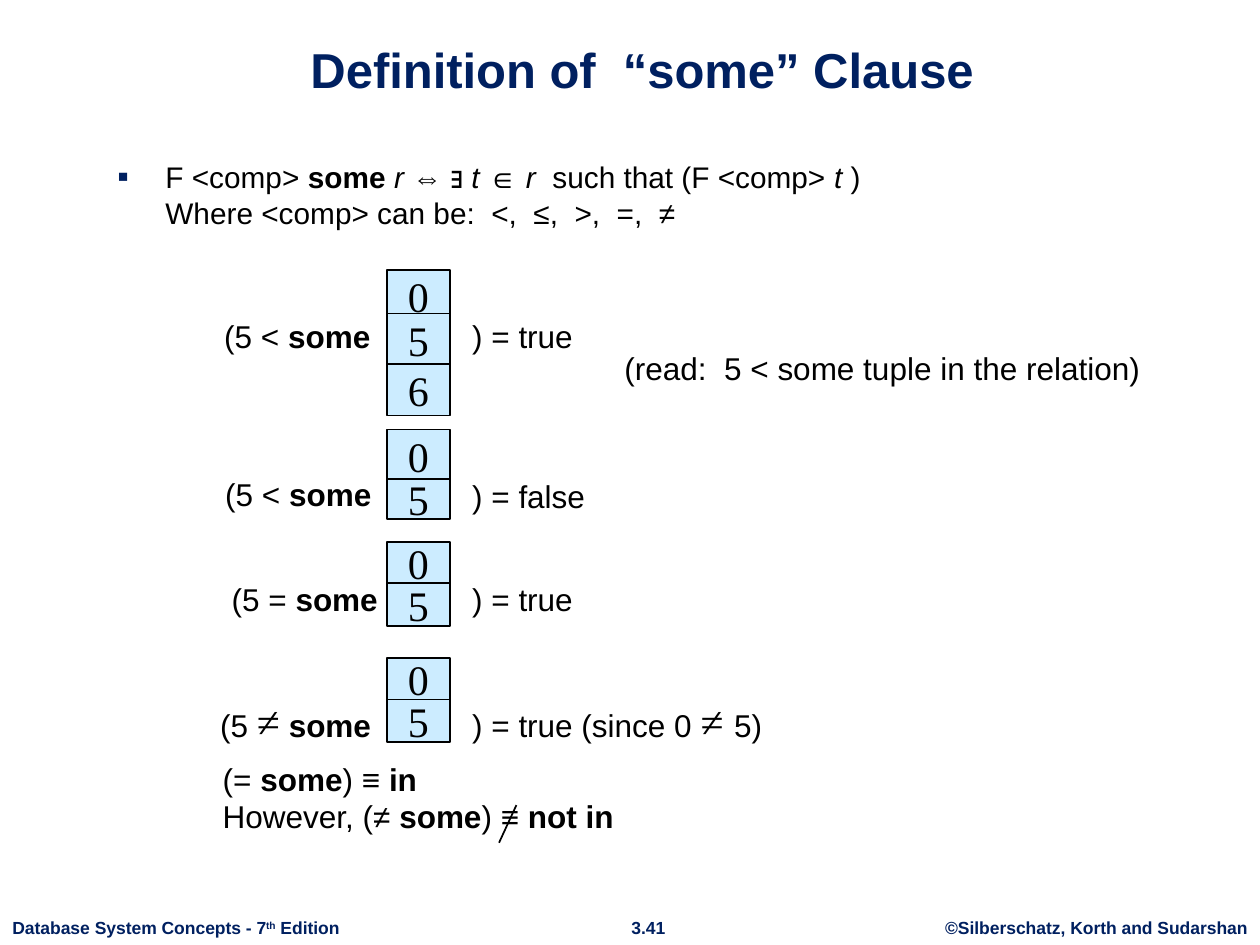
from lxml.etree import SubElement
from pptx import Presentation
from pptx.dml.color import RGBColor
from pptx.enum.shapes import MSO_CONNECTOR, MSO_SHAPE
from pptx.enum.text import MSO_ANCHOR, MSO_AUTO_SIZE, PP_ALIGN
from pptx.oxml.ns import qn
from pptx.util import Cm, Pt

NAVY = RGBColor(0x00, 0x20, 0x60)
BLACK = RGBColor(0x00, 0x00, 0x00)
PALE_BLUE = RGBColor(0xCC, 0xEC, 0xFF)

CELL_LEFT, CELL_WIDTH = 7.8, 1.27
RESULT_LEFT = 9.27

RELATIONS = [
    [("0", 5.44, 1.04), ("5", 6.32, 1.04), ("6", 7.34, 1.04)],
    [("0", 8.66, 1.07), ("5", 9.65, 0.81)],
    [("0", 10.92, 0.86), ("5", 11.76, 0.86)],
    [("0", 13.26, 0.86), ("5", 14.1, 0.86)],
]

LABELS = [
    ((4.27, 6.27, 3.76, 1.02), [("(5 < ", ""), ("some", "bold")]),
    ((RESULT_LEFT, 6.27, 2.54, 1.02), [(") = true", "")]),
    ((12.34, 6.91, 13.05, 1.02), [("(read:  5 < some tuple in the relation)", "")]),
    ((4.29, 9.45, 3.84, 1.02), [("(5 < ", ""), ("some", "bold")]),
    ((RESULT_LEFT, 9.5, 3.38, 1.02), [(") = false", "")]),
    ((4.42, 11.56, 4.24, 1.02), [("(5 = ", ""), ("some", "bold")]),
    ((RESULT_LEFT, 11.56, 3.38, 1.02), [(") = true", "")]),
    ((4.19, 13.89, 4.01, 1.27),
     [("(5 ", ""), ("≠", "symbol"), (" ", ""), ("some", "bold")]),
    ((RESULT_LEFT, 13.89, 6.99, 1.27),
     [(") = true (since 0 ", ""), ("≠ ", "symbol"), ("5)", "")]),
]

EQUIVALENCES = [
    [("(= ", ""), ("some", "bold"), (") ≡ ", ""), ("in", "bold")],
    [("However, (≠ ", ""), ("some", "bold"), (") ≡ ", ""), ("not in", "bold")],
]

DEFINITION = [
    [("F <comp> ", ""), ("some ", "bold"), ("r ", "italic"), ("⇔ ∃ ", ""),
     ("t ", "italic"), ("∈", ""), (" r  ", "italic"),
     ("such that (F <comp> ", ""), ("t ", "italic"), (")", "")],
    [("Where <comp> can be:  <,  ≤,  >,  =,  ≠", "")],
]

FOOTERS = [
    ((0, 18.36, 7.14, 0.69), PP_ALIGN.LEFT,
     [("Database System Concepts - 7", "bold"), ("th", "bold superscript"),
      (" Edition", "bold")]),
    ((12.45, 18.36, 1.24, 0.69), PP_ALIGN.CENTER, [("3.41", "bold")]),
    ((18.8, 18.36, 6.6, 0.69), PP_ALIGN.CENTER,
     [("©Silberschatz, Korth and Sudarshan", "bold")]),
]


def add_spans(para, spans, size=18, color=BLACK):
    for text, style in spans:
        span = para.add_run()
        span.text = text
        symbol = "symbol" in style
        span.font.name = "Times New Roman" if symbol else "Arial"
        span.font.size = Pt(24 if symbol else size)
        span.font.bold = "bold" in style
        span.font.italic = "italic" in style
        span.font.color.rgb = color
        if "superscript" in style:
            span._r.get_or_add_rPr().set("baseline", "30000")


def place(shape, left, top, width, height):
    shape.left, shape.top = Cm(left), Cm(top)
    shape.width, shape.height = Cm(width), Cm(height)


def add_label(page, bounds, lines, size=18, color=BLACK, align=PP_ALIGN.LEFT, wrap=True):
    box = page.shapes.add_textbox(*map(Cm, bounds))
    frame = box.text_frame
    frame.word_wrap = wrap
    for index, spans in enumerate(lines):
        para = frame.add_paragraph() if index else frame.paragraphs[0]
        para.alignment = align
        add_spans(para, spans, size, color)


def add_cell(page, value, top, height):
    cell = page.shapes.add_shape(
        MSO_SHAPE.RECTANGLE, Cm(CELL_LEFT), Cm(top), Cm(CELL_WIDTH), Cm(height))
    cell.shadow.inherit = False
    cell.fill.solid()
    cell.fill.fore_color.rgb = PALE_BLUE
    cell.line.color.rgb = BLACK
    cell.line.width = Pt(1)
    frame = cell.text_frame
    frame.word_wrap = False
    frame.vertical_anchor = MSO_ANCHOR.MIDDLE
    para = frame.paragraphs[0]
    para.alignment = PP_ALIGN.CENTER
    add_spans(para, [(value, "symbol")])


def add_stroke(page, start, end):
    stroke = page.shapes.add_connector(
        MSO_CONNECTOR.STRAIGHT, *map(Cm, start), *map(Cm, end))
    stroke.line.color.rgb = BLACK
    stroke.line.width = Pt(1)
    SubElement(stroke._element.spPr, qn("a:effectLst"))


def fill_title(title):
    place(title, 1.73, 0.41, 22.43, 1.7)
    frame = title.text_frame
    frame.auto_size = MSO_AUTO_SIZE.NONE
    frame.vertical_anchor = MSO_ANCHOR.BOTTOM
    para = frame.paragraphs[0]
    para.alignment = PP_ALIGN.CENTER
    add_spans(para, [("Definition of  “some” Clause", "bold")], 28, NAVY)


def add_bullet(para):
    properties = para._p.get_or_add_pPr()
    properties.set("marL", str(Cm(0.97)))
    properties.set("indent", str(Cm(-0.97)))
    color = SubElement(properties, qn("a:buClr"))
    SubElement(color, qn("a:srgbClr")).set("val", str(NAVY))
    SubElement(properties, qn("a:buSzPct")).set("val", "110000")
    SubElement(properties, qn("a:buFont")).set("typeface", "Arial")
    SubElement(properties, qn("a:buChar")).set("char", "▪")


def fill_body(body):
    place(body, 2.11, 3.07, 18.9, 1.98)
    body.text_frame.auto_size = MSO_AUTO_SIZE.NONE
    para = body.text_frame.paragraphs[0]
    add_bullet(para)
    para.space_before = Pt(0)
    for index, spans in enumerate(DEFINITION):
        if index:
            para.add_line_break()
        add_spans(para, spans, 17)


def main():
    deck = Presentation()
    deck.slide_width, deck.slide_height = Cm(25.4), Cm(19.05)
    page = deck.slides.add_slide(deck.slide_layouts[1])
    fill_title(page.shapes.title)
    fill_body(page.placeholders[1])
    for relation in RELATIONS:
        for value, top, height in relation:
            add_cell(page, value, top, height)
    for bounds, spans in LABELS:
        add_label(page, bounds, [spans])
    add_label(page, (4.24, 15.19, 18.9, 1.98), EQUIVALENCES)
    add_stroke(page, (10.41, 16.23), (10.06, 16.99))
    for bounds, align, spans in FOOTERS:
        add_label(page, bounds, [spans], 10, NAVY, align, wrap=False)
    deck.save("out.pptx")


if __name__ == "__main__":
    main()
